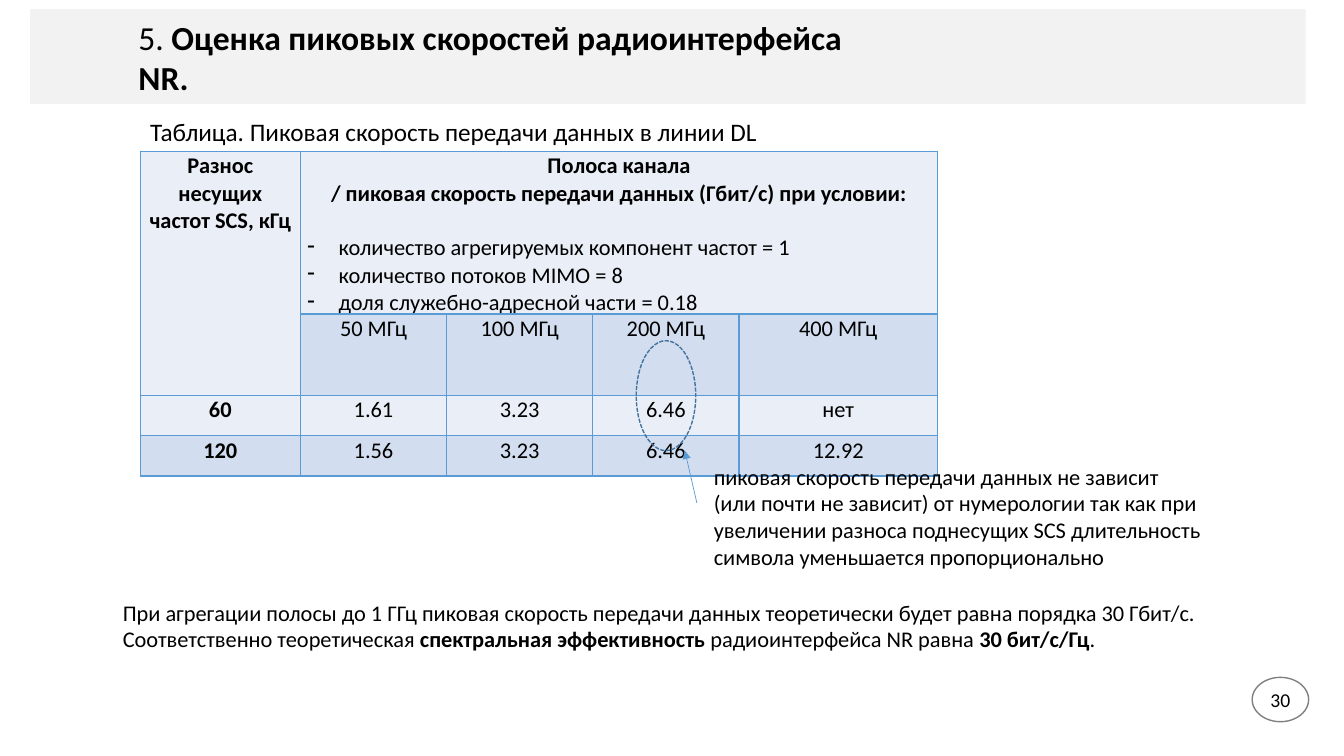
import dataclasses

import pptx
import pptx.dml.color
import pptx.enum.dml
import pptx.enum.shapes
import pptx.enum.text
import pptx.oxml
import pptx.oxml.ns
import pptx.util

SHAPES = pptx.enum.shapes.MSO_SHAPE
CENTER = pptx.enum.text.PP_ALIGN.CENTER


@dataclasses.dataclass(frozen=True)
class Theme:
    font: str = "Calibri"
    title: int = 24
    caption: int = 18
    body: int = 16
    number: int = 14
    text: str = "000000"
    band: str = "F2F2F2"
    paper: str = "FFFFFF"
    light: str = "EAEFF7"
    dark: str = "D2DEEF"
    accent: str = "5B9BD5"
    ring: str = "43739E"
    gray: str = "808080"


THEME = Theme()


@dataclasses.dataclass(frozen=True)
class Box:
    left: int
    top: int
    width: int
    height: int

    def point(self, x, y):
        """Point at a percentage of the box."""
        return round(self.left + self.width * x / 100), round(self.top + self.height * y / 100)

    def inner(self, x, y, width, height):
        """Inner box, all four values in percent of this box."""
        return Box(*self.point(x, y), round(self.width * width / 100),
                   round(self.height * height / 100))

    def frame(self):
        return self.left, self.top, self.width, self.height


def color(value):
    return pptx.dml.color.RGBColor.from_string(value)


def write(paragraph, runs, size, bold=None, alignment=None):
    """Fill a paragraph with (text, bold) runs."""
    font = paragraph.font
    font.name, font.size, font.bold = THEME.font, pptx.util.Pt(size), bold
    font.color.rgb = color(THEME.text)
    paragraph.alignment = alignment
    for text, run_bold in runs:
        run = paragraph.add_run()
        run.text = text
        if run_bold:
            run.font.bold = True


def add_text(slide, box, paragraphs, size):
    frame = slide.shapes.add_textbox(*box.frame()).text_frame
    frame.word_wrap = True
    for index, runs in enumerate(paragraphs):
        paragraph = frame.add_paragraph() if index else frame.paragraphs[0]
        write(paragraph, runs, size)


def add_plain_shape(slide, kind, box, fill=None, line=None):
    shape = slide.shapes.add_shape(kind, *box.frame())
    shape.shadow.inherit = False
    if fill:
        shape.fill.solid()
        shape.fill.fore_color.rgb = color(fill)
    else:
        shape.fill.background()
    if line:
        shape.line.color.rgb = color(line)
        shape.line.width = pptx.util.Pt(1)
    else:
        shape.line.fill.background()
    return shape


def add_heading(slide, box):
    add_plain_shape(slide, SHAPES.RECTANGLE, box, THEME.band)
    add_text(slide, box.inner(7.7, 3.2, 58.6, 53), [[
        ("5. ", False), ("Оценка пиковых скоростей радиоинтерфейса NR.", True)]], THEME.title)


def style_cell(cell, fill):
    cell.margin_left = cell.margin_right = pptx.util.Inches(0.07)
    cell.margin_top, cell.margin_bottom = pptx.util.Inches(0.01), 0
    properties = cell._tc.get_or_add_tcPr()
    for side in ("lnL", "lnR", "lnT", "lnB"):
        properties.append(pptx.oxml.parse_xml(
            f'<a:{side} {pptx.oxml.ns.nsdecls("a")} w="12700"><a:solidFill>'
            f'<a:srgbClr val="{THEME.accent}"/></a:solidFill></a:{side}>'))
    cell.fill.solid()
    cell.fill.fore_color.rgb = color(fill)


def add_dash(paragraph):
    properties = paragraph._p.get_or_add_pPr()
    indent = pptx.util.Inches(0.31)
    properties.set("marL", str(indent))
    properties.set("indent", str(-indent))
    bullet = pptx.oxml.parse_xml(f'<a:buChar {pptx.oxml.ns.nsdecls("a")} char="-"/>')
    properties.insert_element_before(bullet, "a:tabLst", "a:defRPr", "a:extLst")


def write_conditions(cell):
    """Header of the bandwidth columns: two bold lines, then a dashed list."""
    frame = cell.text_frame
    write(frame.paragraphs[0], [("Полоса канала", False)], THEME.body, True, CENTER)
    write(frame.add_paragraph(),
          [("/ пиковая скорость передачи данных (Гбит/с) при условии:", False)],
          THEME.body, True, CENTER)
    conditions = ["количество агрегируемых компонент частот = 1",
                  "количество потоков MIMO = 8",
                  "доля служебно-адресной части = 0.18"]
    for index, condition in enumerate(conditions):
        paragraph = frame.add_paragraph()
        write(paragraph, [(condition, False)], THEME.body, False)
        if index == 0:
            paragraph.space_before = pptx.util.Pt(19.5)
        add_dash(paragraph)


def add_rate_table(slide, box):
    add_text(slide, box.inner(0, 0, 79.5, 14.2),
             [[("Таблица. Пиковая скорость передачи данных в линии DL", False)]], THEME.caption)
    rows = [["Разнос несущих частот SCS, кГц", "", "", "", ""],
            ["", "50 МГц", "100 МГц", "200 МГц", "400 МГц"],
            ["60", "1.61", "3.23", "6.46", "нет"],
            ["120", "1.56", "3.23", "6.46", "12.92"]]
    area = box.inner(0, 14.2, 100, 85.8)
    table = slide.shapes.add_table(len(rows), len(rows[0]), *area.frame()).table
    table.first_row = table.horz_banding = False
    for column, share in zip(table.columns, (20.1, 18.33, 18.33, 18.33, 24.91)):
        column.width = round(area.width * share / 100)
    for row, share in zip(table.rows, (50, 17, 16.5, 16.5)):
        row.height = round(area.height * share / 100)
    table.cell(0, 0).merge(table.cell(1, 0))
    table.cell(0, 1).merge(table.cell(0, 4))
    for row_index, row in enumerate(rows):
        for column_index, text in enumerate(row):
            cell = table.cell(row_index, column_index)
            style_cell(cell, THEME.dark if row_index % 2 else THEME.light)
            if text:
                write(cell.text_frame.paragraphs[0], [(text, False)], THEME.body,
                      column_index == 0, CENTER)
    write_conditions(table.cell(0, 1))


def add_callout(slide, box):
    # Dashed ring around the equal rates
    ring = add_plain_shape(slide, SHAPES.OVAL, box.inner(0, 0, 10.3, 46.6), line=THEME.ring)
    ring.line.dash_style = pptx.enum.dml.MSO_LINE.SQUARE_DOT
    # Arrow from the note to the ring
    arrow = slide.shapes.add_connector(pptx.enum.shapes.MSO_CONNECTOR.STRAIGHT,
                                       *box.point(10.5, 68.8), *box.point(8.4, 46.6))
    arrow.line.color.rgb = color(THEME.accent)
    arrow.line.width = pptx.util.Pt(0.5)
    namespace = pptx.oxml.ns.nsdecls("a")
    properties = arrow._element.spPr
    properties.find(pptx.oxml.ns.qn("a:ln")).append(
        pptx.oxml.parse_xml(f'<a:tailEnd {namespace} type="triangle"/>'))
    properties.append(pptx.oxml.parse_xml(f"<a:effectLst {namespace}/>"))
    # Note
    add_text(slide, box.inner(11.7, 49.6, 88.3, 50.4), [[(
        "пиковая скорость передачи данных не зависит (или почти не зависит) от нумерологии "
        "так как при увеличении разноса поднесущих SCS длительность символа уменьшается "
        "пропорционально", False)]], THEME.body)


def add_conclusion(slide, box):
    add_text(slide, box, [
        [("При агрегации полосы до 1 ГГц пиковая скорость передачи данных теоретически "
          "будет равна порядка 30 Гбит/с.", False)],
        [("Соответственно теоретическая ", False), ("спектральная эффективность ", True),
         ("радиоинтерфейса NR равна ", False), ("30 бит/с/Гц", True), (".", False)],
    ], THEME.body)


def add_page_number(slide, box):
    frame = add_plain_shape(slide, SHAPES.OVAL, box, THEME.paper, THEME.gray).text_frame
    frame.margin_left = frame.margin_right = 0
    frame.vertical_anchor = pptx.enum.text.MSO_ANCHOR.MIDDLE
    write(frame.paragraphs[0], [("30", False)], THEME.number, alignment=CENTER)


def main():
    presentation = pptx.Presentation()
    presentation.slide_width = pptx.util.Inches(13.33)
    presentation.slide_height = pptx.util.Inches(7.5)
    slide = presentation.slides.add_slide(presentation.slide_layouts[6])
    page = Box(0, 0, presentation.slide_width, presentation.slide_height)
    add_heading(slide, page.inner(2.25, 1.2, 94.9, 12.53))
    add_rate_table(slide, page.inner(10.43, 14.67, 59.34, 37.6))
    add_callout(slide, page.inner(47.34, 45.07, 42.99, 31.2))
    add_conclusion(slide, page.inner(8.4, 78.53, 82.6, 12.13))
    add_page_number(slide, page.inner(93.17, 89.6, 4.2, 5.87))
    presentation.save("out.pptx")


if __name__ == "__main__":
    main()
